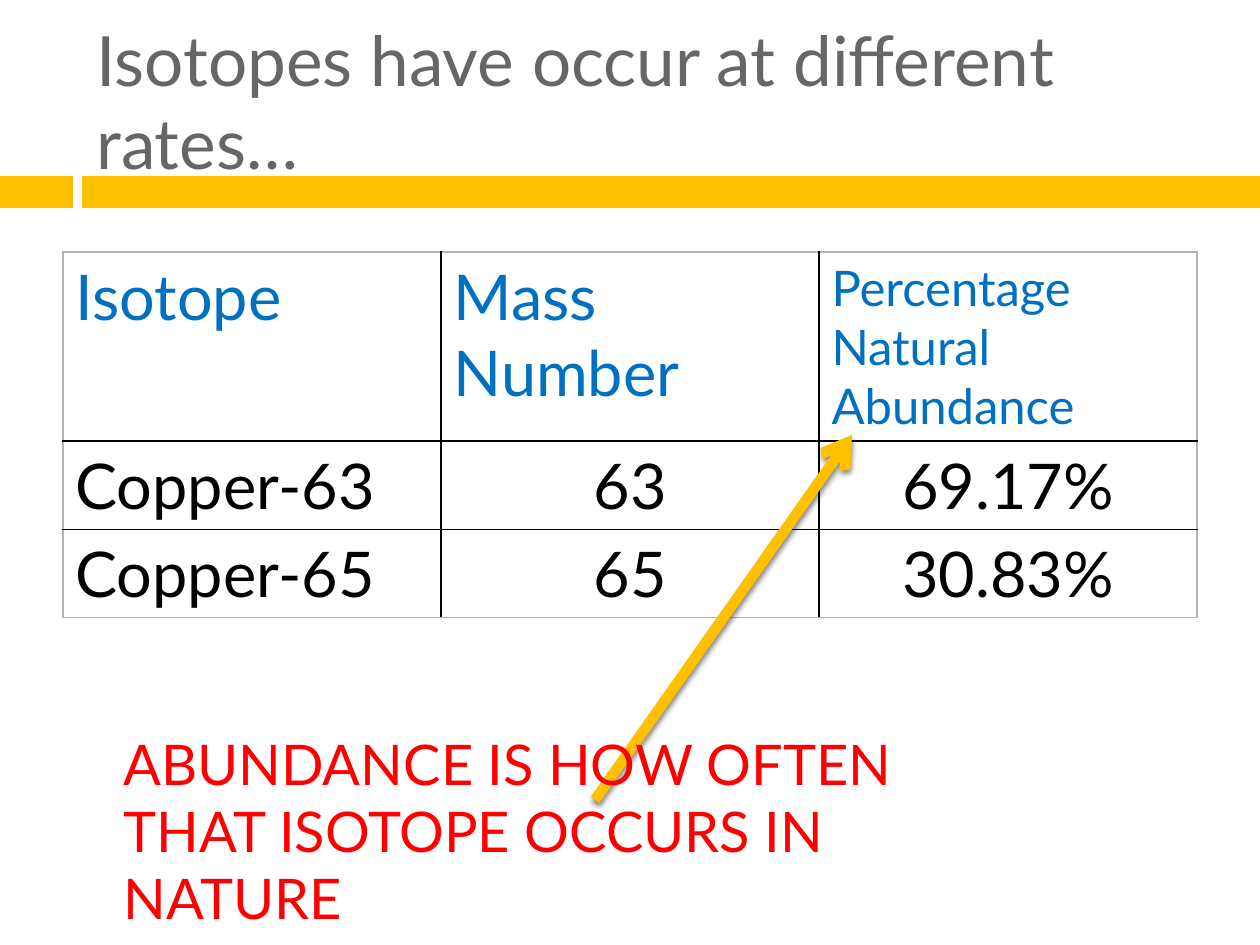
import lxml.etree
import pptx
import pptx.dml.color
import pptx.enum.shapes
import pptx.enum.text
import pptx.oxml
import pptx.util

SCALE = 914400 / 126
NS = 'xmlns:a="http://schemas.openxmlformats.org/drawingml/2006/main"'
GOLD = "FFC000"


def px(*vals):
    """Turn px lengths into EMU."""
    return [pptx.util.Emu(round(v * SCALE)) for v in vals]


def style(para, size, color):
    para.font.size = pptx.util.Pt(size)
    para.font.name = "Lato"
    para.font.color.rgb = pptx.dml.color.RGBColor.from_string(color)


deck = pptx.Presentation()
deck.slide_width, deck.slide_height = px(1260, 945)
slide = deck.slides.add_slide(deck.slide_layouts[6])
shapes = slide.shapes

# Gold band
for left, width in ((0, 73), (82, 1178)):
    bar = shapes.add_shape(pptx.enum.shapes.MSO_SHAPE.RECTANGLE,
                           *px(left, 176, width, 32))
    bar.shadow.inherit = False
    bar.fill.solid()
    bar.fill.fore_color.rgb = pptx.dml.color.RGBColor.from_string(GOLD)
    bar.line.fill.background()

# Table
rows = (
    ("Isotope", "Mass Number", "Percentage Natural Abundance"),
    ("Copper-63", "63", "69.17%"),
    ("Copper-65", "65", "30.83%"),
)
heights = px(189, 88, 88)
table = shapes.add_table(3, 3, *px(63, 252, 1134, 365)).table
table.first_row = False
table.horz_banding = False
for r, row in enumerate(rows):
    table.rows[r].height = heights[r]
    for c, text in enumerate(row):
        cell = table.cell(r, c)
        cell.text = text
        para = cell.text_frame.paragraphs[0]
        style(para, 28 if (r, c) == (0, 2) else 36,
              "000000" if r else "0070C0")
        if r and c:
            para.alignment = pptx.enum.text.PP_ALIGN.CENTER
        props = cell._tc.get_or_add_tcPr()
        edges = {"L": c == 0, "R": c == 2, "T": r == 0, "B": r == 2}
        for side, outer in edges.items():
            color = "B3B3B3" if outer else "000000"
            props.append(pptx.oxml.parse_xml(
                f'<a:ln{side} {NS} w="12700"><a:solidFill>'
                f'<a:srgbClr val="{color}"/></a:solidFill></a:ln{side}>'))
        cell.fill.background()

# Arrow to the abundance heading
arrow = shapes.add_connector(pptx.enum.shapes.MSO_CONNECTOR.STRAIGHT,
                             *px(595, 800, 852, 435))
arrow.line.width = pptx.util.Pt(6)
arrow.line.color.rgb = pptx.dml.color.RGBColor.from_string(GOLD)
arrow.line._get_or_add_ln().append(
    pptx.oxml.parse_xml(f'<a:tailEnd {NS} type="arrow"/>'))
arrow._element.spPr.append(pptx.oxml.parse_xml(
    f'<a:effectLst {NS}><a:outerShdw blurRad="38100" dist="30480" '
    'dir="5400000" rotWithShape="0"><a:srgbClr val="000000">'
    '<a:alpha val="45000"/></a:srgbClr></a:outerShdw></a:effectLst>'))

# Title and note
middle = pptx.enum.text.MSO_ANCHOR.MIDDLE
top = pptx.enum.text.MSO_ANCHOR.TOP
for text, place, size, color, anchor in (
    ("Isotopes have occur at different rates…",
     (84, 32, 1124, 136), 39.6, "666666", middle),
    ("ABUNDANCE IS HOW OFTEN THAT ISOTOPE OCCURS IN NATURE",
     (111, 723, 925, 149), 32, "FF0000", top),
):
    frame = shapes.add_textbox(*px(*place)).text_frame
    frame.word_wrap = True
    frame.vertical_anchor = anchor
    frame.text = text
    style(frame.paragraphs[0], size, color)

deck.save("out.pptx")
